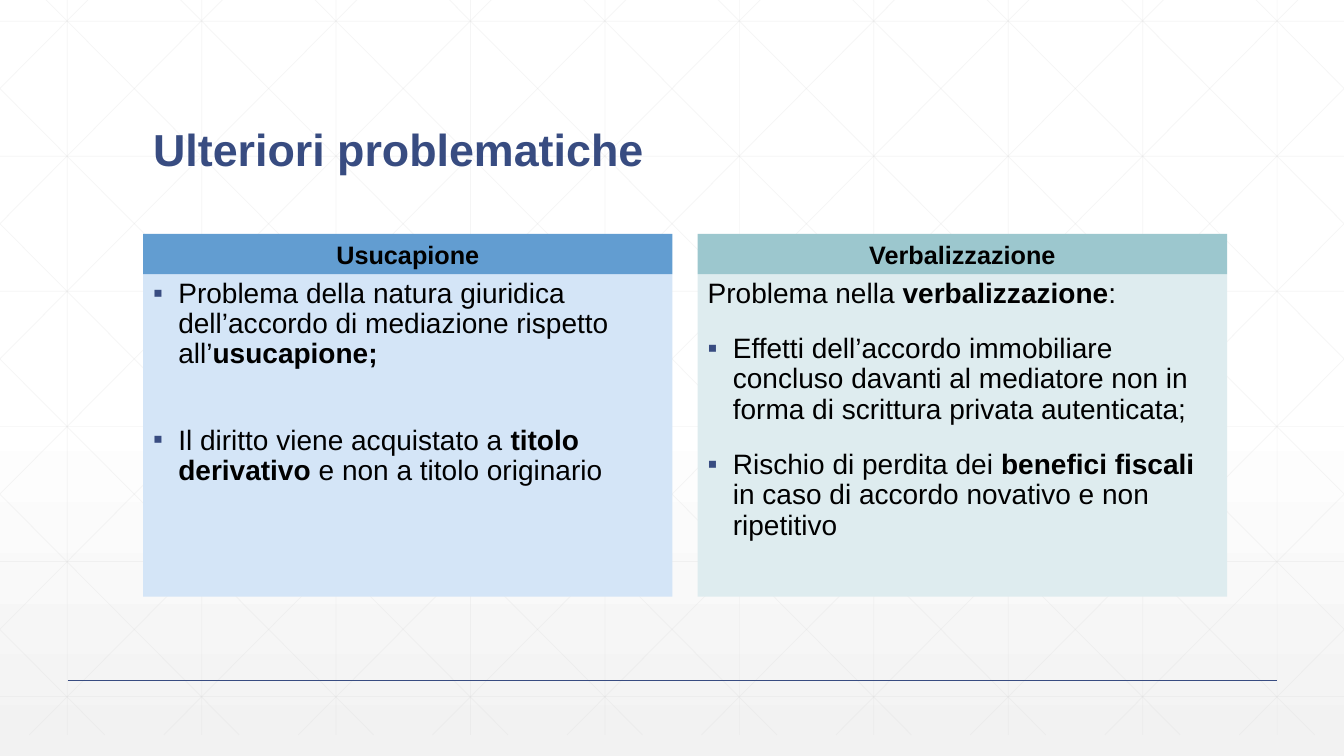
import copy
from dataclasses import dataclass

import lxml.etree
import pptx
import pptx.dml.color
import pptx.enum.shapes
import pptx.enum.text
import pptx.oxml.ns
import pptx.util

Inches = pptx.util.Inches
Pt = pptx.util.Pt
qn = pptx.oxml.ns.qn
ANCHOR = pptx.enum.text.MSO_ANCHOR
ALIGN = pptx.enum.text.PP_ALIGN


@dataclass(frozen=True)
class Theme:
    """Colours, font and type sizes of the slide."""
    font: str = "Arial"
    accent: str = "384C81"
    ink: str = "000000"
    grid: str = "D9D9D9"
    paper: str = "FFFFFF"
    paper_end: str = "F2F2F2"
    blue: str = "629DD1"
    blue_tint: str = "D4E5F7"
    teal: str = "9CC7CE"
    teal_tint: str = "DEECEF"
    title_size: int = 32
    heading_size: int = 18
    body_size: int = 20
    grid_width: float = 0.5
    grid_opacity: int = 25
    rule_width: float = 1


THEME = Theme()
SLIDE_WIDTH, SLIDE_HEIGHT = 13.33, 7.5

COLUMNS = [
    ("Usucapione", THEME.blue, THEME.blue_tint, [
        (True, 0, [("Problema della natura giuridica dell’accordo di mediazione "
                    "rispetto all’", False), ("usucapione;", True)]),
        (True, 40, [("Il diritto viene acquistato a ", False),
                    ("titolo derivativo ", True),
                    ("e non a titolo originario", False)]),
    ]),
    ("Verbalizzazione", THEME.teal, THEME.teal_tint, [
        (False, 0, [("Problema nella ", False), ("verbalizzazione", True),
                    (":", False)]),
        (True, 18, [("Effetti dell’accordo immobiliare concluso davanti al mediatore "
                     "non in forma di scrittura privata autenticata;", False)]),
        (True, 18, [("Rischio di perdita dei ", False), ("benefici fiscali", True),
                    (" in caso di accordo novativo e non ripetitivo", False)]),
    ]),
]


def rgb(value):
    """Return the colour for a hex string."""
    return pptx.dml.color.RGBColor.from_string(value)


def add_line(slide, start, end, color, width, opacity=100):
    """Draw a straight line between two points."""
    line = slide.shapes.add_connector(
        pptx.enum.shapes.MSO_CONNECTOR.STRAIGHT,
        *(Inches(length) for length in (*start, *end)))
    line.line.color.rgb = rgb(color)
    line.line.width = Pt(width)
    properties = line.element.spPr
    if opacity < 100:
        tone = properties.find(".//" + qn("a:srgbClr"))
        lxml.etree.SubElement(tone, qn("a:alpha"), val=str(opacity * 1000))
    lxml.etree.SubElement(properties, qn("a:effectLst"))


def add_run(paragraph, text, size, color, bold):
    """Append one formatted run."""
    run = paragraph.add_run()
    run.text = text
    run.font.name = THEME.font
    run.font.size = Pt(size)
    run.font.bold = bold
    run.font.color.rgb = rgb(color)


def add_bullet(paragraph):
    """Give a paragraph a hanging square bullet."""
    properties = paragraph._p.get_or_add_pPr()
    properties.set("marL", str(Inches(0.25)))
    properties.set("indent", str(-Inches(0.25)))
    tone = lxml.etree.SubElement(properties, qn("a:buClr"))
    lxml.etree.SubElement(tone, qn("a:srgbClr"), val=THEME.accent)
    lxml.etree.SubElement(properties, qn("a:buFont"), typeface=THEME.font)
    lxml.etree.SubElement(properties, qn("a:buChar"), char="▪")


def add_panel(slide, left, top, width, height, fill, anchor):
    """Add a plain filled rectangle and return its text frame."""
    panel = slide.shapes.add_shape(
        pptx.enum.shapes.MSO_SHAPE.RECTANGLE,
        Inches(left), Inches(top), Inches(width), Inches(height))
    panel.shadow.inherit = False
    panel.fill.solid()
    panel.fill.fore_color.rgb = rgb(fill)
    panel.line.fill.background()
    panel.text_frame.word_wrap = True
    panel.text_frame.vertical_anchor = anchor
    return panel.text_frame


def paint_background(slide):
    """Fill the background with white fading to light grey."""
    fill = slide.background.fill
    fill.gradient()
    fill.gradient_angle = 270
    first, last = fill.gradient_stops
    first.color.rgb, first.position = rgb(THEME.paper), 0
    last.color.rgb, last.position = rgb(THEME.paper_end), 1
    first_element = slide.background._cSld.find(".//" + qn("a:gs"))
    middle = copy.deepcopy(first_element)
    middle.set("pos", "53000")
    first_element.addnext(middle)


def draw_grid(slide, left, top, width, height):
    """Draw uprights, levels and mirrored diagonals clipped to the box."""
    step, run = 4 / 3, 7.455
    slope = height / run
    right, bottom = left + width, top + height
    lines = []
    for index in range(10):
        x = left + step * (index + 0.5)
        lines.append(((x, top), (x, bottom)))
    for index in range(6):
        y = top + 0.42 + 1.34 * index
        lines.append(((left, y), (right, y)))
    for index in range(-5, 10):
        origin = left + 0.25 + step * index
        ends = [(x, top + (x - origin) * slope)
                for x in (max(origin, left), min(origin + run, right))]
        lines.append(ends)
        lines.append([(left + right - x, y) for x, y in ends])
    for start, end in lines:
        add_line(slide, start, end, THEME.grid, THEME.grid_width, THEME.grid_opacity)


def add_title(slide, left, top, width, height):
    """Place the slide title at the bottom of its box."""
    title = slide.shapes.add_textbox(
        Inches(left), Inches(top), Inches(width), Inches(height)).text_frame
    title.word_wrap = True
    title.vertical_anchor = ANCHOR.BOTTOM
    title.paragraphs[0].line_spacing = 0.9
    add_run(title.paragraphs[0], "Ulteriori problematiche",
            THEME.title_size, THEME.accent, True)


def add_column(slide, left, top, width, height, column):
    """Place a heading band over a tinted panel of points."""
    heading, band, tint, points = column
    band_height = 0.4
    body = add_panel(slide, left, top + band_height, width, height - band_height,
                     tint, ANCHOR.TOP)
    for index, (bulleted, gap, runs) in enumerate(points):
        paragraph = body.add_paragraph() if index else body.paragraphs[0]
        paragraph.alignment = ALIGN.LEFT
        paragraph.line_spacing = 0.9
        paragraph.space_before = Pt(gap)
        if bulleted:
            add_bullet(paragraph)
        for text, bold in runs:
            add_run(paragraph, text, THEME.body_size, THEME.ink, bold)
    label = add_panel(slide, left, top, width, band_height, band, ANCHOR.MIDDLE)
    label.paragraphs[0].alignment = ALIGN.CENTER
    add_run(label.paragraphs[0], heading, THEME.heading_size, THEME.ink, True)


def main():
    """Build and save the slide."""
    deck = pptx.Presentation()
    deck.slide_width, deck.slide_height = Inches(SLIDE_WIDTH), Inches(SLIDE_HEIGHT)
    slide = deck.slides.add_slide(deck.slide_layouts[6])
    paint_background(slide)
    draw_grid(slide, 0, -0.21, SLIDE_WIDTH, 7.5)
    add_line(slide, (0.67, 6.75), (12.67, 6.75), THEME.accent, THEME.rule_width)
    add_title(slide, 1.42, 0.55, 10.5, 1.25)
    for index, column in enumerate(COLUMNS):
        add_column(slide, 1.42 + 5.5 * index, 2.32, 5.25, 3.6, column)
    deck.save("out.pptx")


if __name__ == "__main__":
    main()
